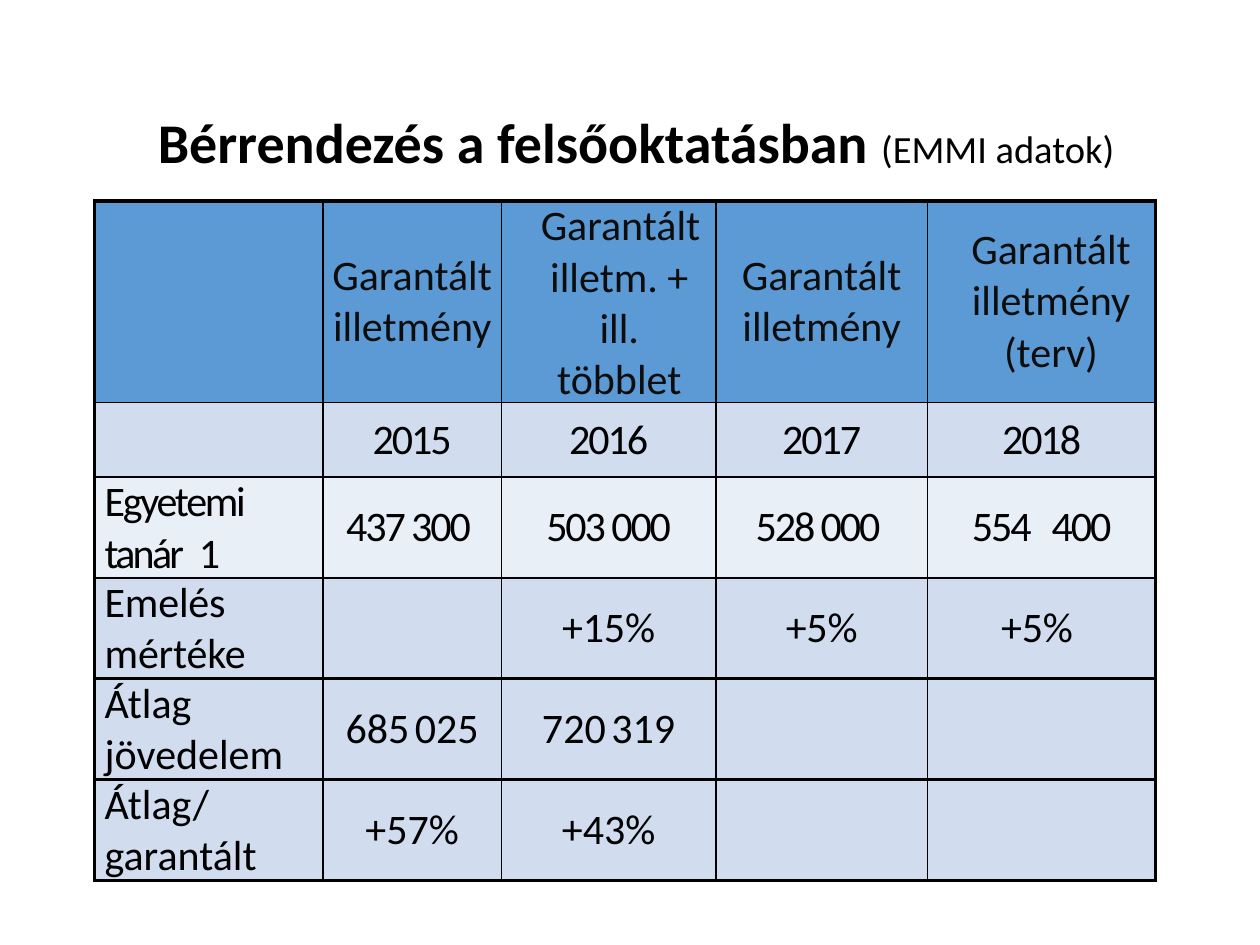
import pptx
import pptx.dml.color
import pptx.enum.text
import pptx.oxml.ns
import pptx.util
from lxml import etree
from pptx.util import Cm, Pt

RGBColor = pptx.dml.color.RGBColor
BLACK = RGBColor(0x00, 0x00, 0x00)
HEADER_TEXT = RGBColor(0x0D, 0x0D, 0x0D)
HEADER_BLUE = RGBColor(0x5B, 0x9A, 0xD4)
BAND_BLUE = RGBColor(0xD1, 0xDD, 0xEF)
PALE_BLUE = RGBColor(0xE9, 0xEF, 0xF6)

ALIGN = pptx.enum.text.PP_ALIGN
MIDDLE = pptx.enum.text.MSO_ANCHOR.MIDDLE
THIN, THICK = Pt(1), Pt(2.25)
NO_MARGINS = dict.fromkeys(
    ("margin_left", "margin_top", "margin_right", "margin_bottom"), 0)

COLUMN_WIDTHS = (4.6, 3.6, 4.32, 4.27, 4.6)
ROW_HEIGHTS = (1.5, 1.5, 1.5, 1.5, 1.9, 1.9)
ROW_FILLS = (HEADER_BLUE, BAND_BLUE, PALE_BLUE) + (BAND_BLUE,) * 3
ROW_TRACKING = (0, -1.2, -1.2, -0.1, 0, 0)
FIRST_THICK_RULE = 3  # from this row on, the rule below is thick

# A cell is a string, or a list of (text, size, letter spacing) parts
ROWS = (
    ("", "Garantált illetmény", "Garantált illetm. + ill. többlet",
     "Garantált illetmény", "Garantált illetmény (terv)"),
    ("", "2015", "2016", "2017", "2018"),
    ([("Egyetemi ", 24, -1.3), ("tanár", 24, -1.6), (" ", 24, 3), ("1", 24, 0)],
     "437 300 ", " 503 000 ", "528 000 ",
     [("554", 24, -1.2), (" ", 24, 6), ("400", 24, -1.2)]),
    ("Emelés mértéke", "", "+15%", "+5%", "+5% "),
    ("Átlag jövedelem",
     [("685", 24, 0), (" ", 14, 0), ("025", 24, 0)],
     [("720", 24, 0), (" ", 14, 0), ("319", 24, 0)], "", ""),
    ("Átlag/ garantált", "+57%", "+43%", "", ""),
)
# Paragraph indents of header cells: left, right, first line (cm)
HEADER_INDENTS = {2: (0.66, 0.23, 0.05), 4: (0.74, 0.36, 0)}


def apply_format(target, values):
    for name, value in values.items():
        setattr(target, name, value)


def set_indents(paragraph, **indents):
    properties = paragraph._p.get_or_add_pPr()
    for name, length in indents.items():
        properties.set(name, str(int(Cm(length))))


def add_run(paragraph, text, size, color=BLACK, tracking=0, font="Calibri", bold=False):
    run = paragraph.add_run()
    run.text = text
    apply_format(run.font, {"name": font, "size": Pt(size), "bold": bold})
    run.font.color.rgb = color
    if tracking:
        run._r.get_or_add_rPr().set("spc", str(round(tracking * 100)))


def set_borders(cell, widths):
    properties = cell._tc.get_or_add_tcPr()
    for position, (side, width) in enumerate(widths.items()):
        line = etree.Element(pptx.oxml.ns.qn(f"a:ln{side}"), w=str(int(width)))
        fill = etree.SubElement(line, pptx.oxml.ns.qn("a:solidFill"))
        etree.SubElement(fill, pptx.oxml.ns.qn("a:srgbClr"), val=str(BLACK))
        properties.insert(position, line)


def format_title(title):
    apply_format(title, {"left": Cm(2.67), "top": Cm(2.51),
                         "width": Cm(20.07), "height": Cm(1.1)})
    frame = title.text_frame
    apply_format(frame, {**NO_MARGINS, "vertical_anchor": MIDDLE, "word_wrap": True,
                         "auto_size": pptx.enum.text.MSO_AUTO_SIZE.SHAPE_TO_FIT_TEXT})
    paragraph = frame.paragraphs[0]
    apply_format(paragraph, {"alignment": ALIGN.CENTER, "line_spacing": Pt(31.2)})
    set_indents(paragraph, marL=0.91, indent=-0.89)
    add_run(paragraph, " ", 44, font="Times New Roman")
    add_run(paragraph, "Bérrendezés a felsőoktatásban ", 32, bold=True)
    add_run(paragraph, "(EMMI adatok) ", 22)


def fill_cell(cell, content, row, column):
    is_label = column == 0
    apply_format(cell, {**NO_MARGINS, "vertical_anchor": MIDDLE,
                        "margin_left": Cm(0.2) if is_label else 0})
    cell.fill.solid()
    cell.fill.fore_color.rgb = ROW_FILLS[row]
    set_borders(cell, {
        "L": THICK if is_label else THIN,
        "R": THICK if column == len(COLUMN_WIDTHS) - 1 else THIN,
        "T": THICK if row == 0 or row > FIRST_THICK_RULE else THIN,
        "B": THICK if row >= FIRST_THICK_RULE else THIN,
    })
    if not content:
        return
    paragraph = cell.text_frame.paragraphs[0]
    paragraph.alignment = ALIGN.LEFT if is_label else ALIGN.CENTER
    if row == 0 and column in HEADER_INDENTS:
        left, right, first_line = HEADER_INDENTS[column]
        set_indents(paragraph, marL=left, marR=right, indent=first_line)
    parts = [(content, 24, ROW_TRACKING[row])] if isinstance(content, str) else content
    for text, size, tracking in parts:
        add_run(paragraph, text, size, HEADER_TEXT if row == 0 else BLACK, tracking)


def add_salary_table(slide):
    shape = slide.shapes.add_table(len(ROWS), len(COLUMN_WIDTHS),
                                   Cm(1.91), Cm(4.05), Cm(21.4), Cm(12.67))
    table = shape.table
    for column, width in zip(table.columns, COLUMN_WIDTHS):
        column.width = Cm(width)
    for row, height in zip(table.rows, ROW_HEIGHTS):
        row.height = Cm(height)
    for row, contents in enumerate(ROWS):
        for column, content in enumerate(contents):
            fill_cell(table.cell(row, column), content, row, column)
    shape.height = Cm(12.67)


def main():
    presentation = pptx.Presentation()
    apply_format(presentation, {"slide_width": Cm(25.4), "slide_height": Cm(19.05)})
    slide = presentation.slides.add_slide(presentation.slide_layouts[5])
    # Heading
    format_title(slide.shapes.title)
    # Salaries by year
    add_salary_table(slide)
    presentation.save("out.pptx")


if __name__ == "__main__":
    main()
